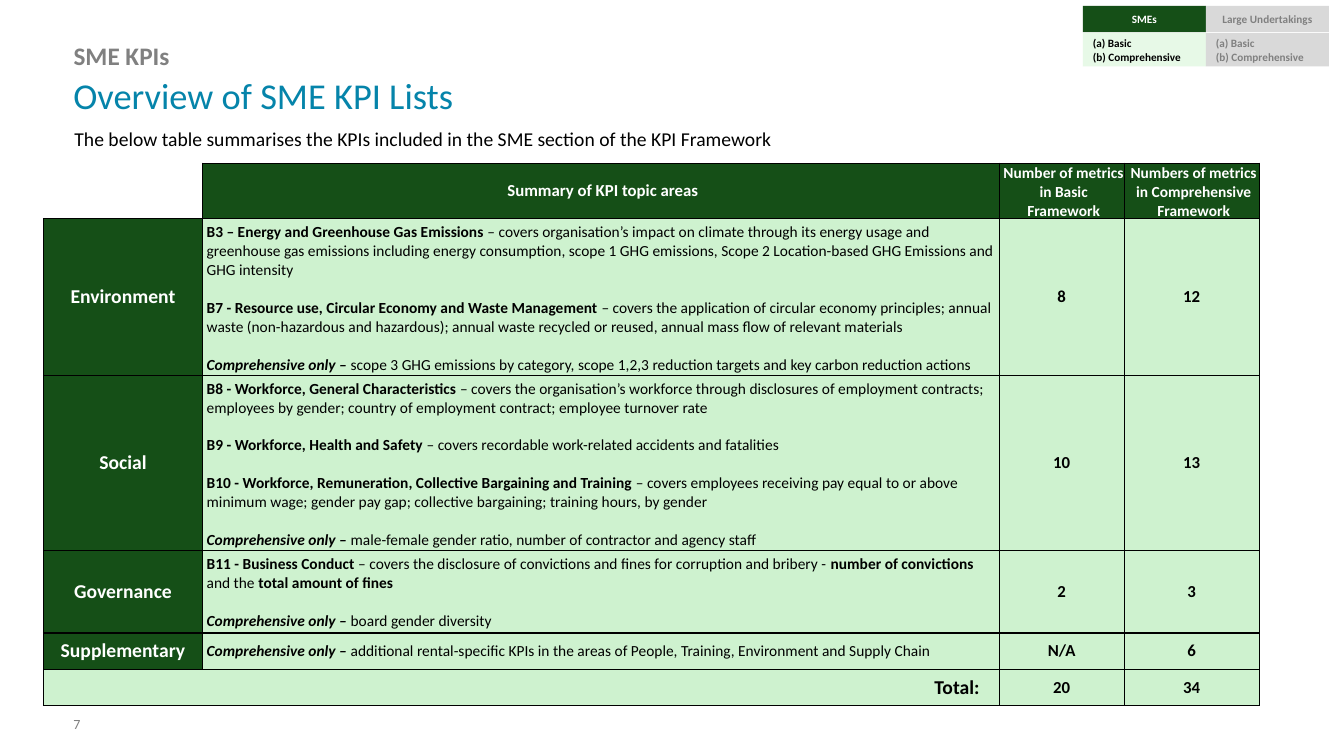
from lxml.etree import SubElement
from pptx import Presentation
from pptx.dml.color import RGBColor
from pptx.enum.shapes import MSO_SHAPE as Shape
from pptx.enum.text import MSO_ANCHOR as Anchor, PP_ALIGN as Align
from pptx.oxml.ns import qn
from pptx.util import Inches, Pt

COLOURS = {
    "dark_green": "154F17",
    "cell_green": "CEF2CF",
    "pale_green": "E7F9E7",
    "light_grey": "D9D9D9",
    "grey": "808080",
    "blue": "0584AA",
    "white": "FFFFFF",
    "black": "000000",
}
COMPREHENSIVE = ("Comprehensive only – ", "bi")

# Each paragraph is a list of (text, style) runs: b for bold, i for italic
TOPICS = [
    ("Environment", [
        [("B3 – Energy and Greenhouse Gas Emissions ", "b"),
         ("– covers organisation’s impact on climate through its energy usage and greenhouse gas "
          "emissions including energy consumption, scope 1 GHG emissions, Scope 2 Location-based "
          "GHG Emissions and GHG intensity", "")],
        [("B7 - Resource use, Circular Economy and Waste Management ", "b"),
         ("– covers the application of circular economy principles; annual waste (non-hazardous "
          "and hazardous); annual waste recycled or reused, annual mass flow of relevant "
          "materials", "")],
        [COMPREHENSIVE,
         ("scope 3 GHG emissions by category, scope 1,2,3 reduction targets and key carbon "
          "reduction actions", "")],
    ], "8", "12"),
    ("Social", [
        [("B8 - Workforce, General Characteristics ", "b"),
         ("– covers the organisation’s workforce through disclosures of employment contracts; "
          "employees by gender; country of employment contract; employee turnover rate", "")],
        [("B9 - Workforce, Health and Safety ", "b"),
         ("– covers recordable work-related accidents and fatalities", "")],
        [("B10 - Workforce, Remuneration, Collective Bargaining and Training ", "b"),
         ("– covers employees receiving pay equal to or above minimum wage; gender pay gap; "
          "collective bargaining; training hours, by gender", "")],
        [COMPREHENSIVE,
         ("male-female gender ratio, number of contractor and agency staff", "")],
    ], "10", "13"),
    ("Governance", [
        [("B11 - Business Conduct ", "b"),
         ("– covers the disclosure of convictions and fines for corruption and bribery - ", ""),
         ("number of convictions ", "b"), ("and the ", ""), ("total amount of fines", "b")],
        [COMPREHENSIVE, ("board gender diversity", "")],
    ], "2", "3"),
    ("Supplementary", [
        [COMPREHENSIVE,
         ("additional rental-specific KPIs in the areas of People, Training, Environment and "
          "Supply Chain", "")],
    ], "N/A", "6"),
]
HEADERS = ["Summary of KPI topic areas", "Number of metrics in Basic Framework",
           "Numbers of metrics in Comprehensive Framework"]
COLUMN_WIDTHS = [1.58, 7.9, 1.24, 1.34]
ROW_HEIGHTS = [0.52, 1.46, 1.64, 0.77, 0.36, 0.36]


def colour(name):
    return RGBColor.from_string(COLOURS[name])


class SlideBuilder:
    font = "Calibri"

    def __init__(self, presentation):
        self.slide = presentation.slides.add_slide(presentation.slide_layouts[5])

    def style_run(self, run, size, colour_name, bold=False, italic=False):
        run.font.name = self.font
        run.font.size = Pt(size)
        run.font.bold = bold
        run.font.italic = italic
        run.font.color.rgb = colour(colour_name)

    def style_text(self, frame, text, size, colour_name, bold=False,
                   align=Align.LEFT, spacing=1.0):
        frame.text = text
        for paragraph in frame.paragraphs:
            paragraph.alignment = align
            paragraph.line_spacing = spacing
            for run in paragraph.runs:
                self.style_run(run, size, colour_name, bold)

    def title(self, text, left, top, width, height):
        shape = self.slide.shapes.title
        shape.left, shape.top = Inches(left), Inches(top)
        shape.width, shape.height = Inches(width), Inches(height)
        shape.text_frame.vertical_anchor = Anchor.MIDDLE
        self.style_text(shape.text_frame, text, 18, "grey", True, spacing=0.9)

    def text(self, text, left, top, width, height, size, colour_name,
             bold=False, anchor=Anchor.TOP, spacing=1.0):
        box = self.slide.shapes.add_textbox(
            Inches(left), Inches(top), Inches(width), Inches(height))
        box.text_frame.word_wrap = True
        box.text_frame.vertical_anchor = anchor
        self.style_text(box.text_frame, text, size, colour_name, bold, spacing=spacing)

    def tag(self, text, left, top, height, fill, colour_name, align):
        shape = self.slide.shapes.add_shape(
            Shape.RECTANGLE, Inches(left), Inches(top), Inches(1.22), Inches(height))
        shape.shadow.inherit = False
        shape.fill.solid()
        shape.fill.fore_color.rgb = colour(fill)
        shape.line.fill.background()
        shape.text_frame.vertical_anchor = Anchor.MIDDLE
        self.style_text(shape.text_frame, text, 8, colour_name, True, align)

    def table(self, left, top, column_widths, row_heights):
        frame = self.slide.shapes.add_table(
            len(row_heights), len(column_widths), Inches(left), Inches(top),
            Inches(sum(column_widths)), Inches(sum(row_heights)))
        table = frame.table
        table.first_row = table.horz_banding = False
        for column, width in zip(table.columns, column_widths):
            column.width = Inches(width)
        for row, height in zip(table.rows, row_heights):
            row.height = Inches(height)
        return table

    def cell(self, cell, fill, borders, margins=(0, 0, 0, 0)):
        cell.margin_left, cell.margin_top, cell.margin_right, cell.margin_bottom = (
            Inches(margin) for margin in margins)
        cell.vertical_anchor = Anchor.MIDDLE
        properties = cell._tc.get_or_add_tcPr()
        for side, width in borders.items():
            line = SubElement(properties, qn(f"a:ln{side}"), w=str(Pt(width)))
            line_fill = SubElement(line, qn("a:solidFill"))
            SubElement(line_fill, qn("a:srgbClr"), val=COLOURS["black"])
        cell.fill.solid()
        cell.fill.fore_color.rgb = colour(fill)

    def summary(self, frame, paragraphs):
        for index, runs in enumerate(paragraphs):
            paragraph = frame.paragraphs[0] if index == 0 else frame.add_paragraph()
            if index:
                paragraph.space_before = Pt(13.4)
            for text, style in runs:
                run = paragraph.add_run()
                run.text = text
                self.style_run(run, 11, "black", "b" in style, "i" in style)


def fill_kpi_table(builder):
    table = builder.table(0.43, 1.62, COLUMN_WIDTHS, ROW_HEIGHTS)
    last_row = len(ROW_HEIGHTS) - 1
    rows = [["", *HEADERS], *TOPICS, ["", "", "20", "34"]]
    table.cell(last_row, 0).merge(table.cell(last_row, 1))

    for row, values in enumerate(rows):
        for column, value in enumerate(values):
            cell = table.cell(row, column)
            borders = {"L": 1 if column < 2 else 0.5, "R": 0.5 if column else 1, "T": 1, "B": 1}
            is_header = row == 0
            is_topic = column == 0 and row < last_row
            if not value:
                if is_header:
                    borders = {"R": 1, "B": 1}
                builder.cell(cell, "white" if is_header else "cell_green", borders)
            elif is_header or is_topic:
                builder.cell(cell, "dark_green", borders, (0.04 if is_header else 0, 0, 0, 0))
                size = 14 if is_topic else 12 if column == 1 else 11
                builder.style_text(cell.text_frame, value, size, "white", True, Align.CENTER)
            else:
                builder.cell(cell, "cell_green", borders, (0.04,) * 4)
                if column == 1:
                    builder.summary(cell.text_frame, value)
                else:
                    builder.style_text(cell.text_frame, value, 12, "black", True, Align.CENTER)


def main():
    presentation = Presentation()
    presentation.slide_width, presentation.slide_height = Inches(13.33), Inches(7.5)
    builder = SlideBuilder(presentation)

    # Headings
    builder.title("SME KPIs", 0.63, 0.4, 12.06, 0.33)
    builder.text("Overview of SME KPI Lists", 0.63, 0.73, 12.06, 0.89, 26, "blue", spacing=0.9)

    # Section tracker
    levels = "(a) Basic\n(b) Comprehensive"
    for left, name, head_fill, head_text, level_fill, level_text in [
        (10.74, "SMEs", "dark_green", "white", "pale_green", "black"),
        (11.96, "Large Undertakings", "light_grey", "grey", "light_grey", "grey"),
    ]:
        builder.tag(name, left, 0.06, 0.26, head_fill, head_text, Align.CENTER)
        builder.tag(levels, left, 0.33, 0.33, level_fill, level_text, Align.LEFT)

    # KPI table with its total label
    fill_kpi_table(builder)
    builder.text("Total:", 9.17, 6.65, 1.57, 0.34, 14, "black", bold=True)

    # Page number and introduction
    builder.text("7", 0.63, 6.98, 2.97, 0.4, 10, "grey", anchor=Anchor.MIDDLE)
    builder.text("The below table summarises the KPIs included in the SME section of the KPI Framework",
                 0.64, 1.13, 12.4, 0.49, 14, "black", anchor=Anchor.MIDDLE)

    presentation.save("out.pptx")


if __name__ == "__main__":
    main()
